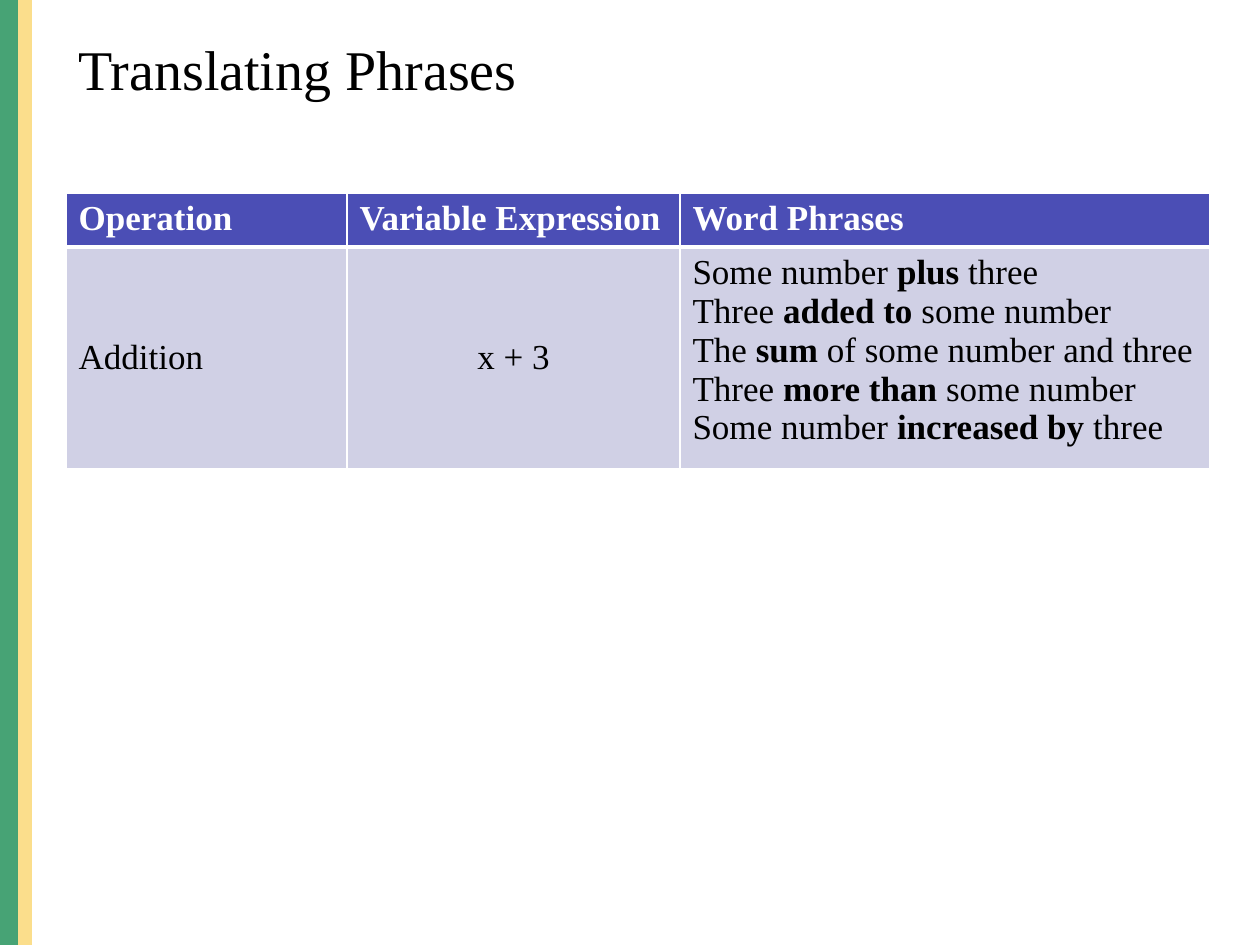
from lxml.etree import SubElement
from pptx import Presentation
from pptx.dml.color import RGBColor
from pptx.enum.shapes import MSO_SHAPE
from pptx.enum.text import MSO_ANCHOR, PP_ALIGN
from pptx.oxml.ns import qn
from pptx.util import Emu, Inches, Pt

FONT = "Times New Roman"
BLACK = RGBColor(0x00, 0x00, 0x00)
WHITE = RGBColor(0xFF, 0xFF, 0xFF)
GREEN = RGBColor(0x33, 0x99, 0x66)
GOLD = RGBColor(0xF8, 0xBE, 0x1A)
INDIGO = RGBColor(0x4B, 0x4E, 0xB5)
LAVENDER = RGBColor(0xD0, 0xD0, 0xE5)

HEADINGS = ["Operation", "Variable Expression", "Word Phrases"]
PHRASES = [
    ("Some number ", "plus", " three"),
    ("Three ", "added to ", "some number"),
    ("The ", "sum", " of some number and three"),
    ("Three ", "more than ", "some number"),
    ("Some number ", "increased by ", "three"),
]
COLUMN_WIDTHS = [281, 333, 530]
ROW_HEIGHTS = [54, 222]


def px(length):
    return Emu(round(length * 914400 / 126))


def set_font(paragraph, size, color, bold=False):
    font = paragraph.font
    font.name, font.size, font.bold = FONT, Pt(size), bold
    font.color.rgb = color


def add_stripe(slide, left, top, width, height, color, opacity):
    stripe = slide.shapes.add_shape(
        MSO_SHAPE.RECTANGLE, px(left), px(top), px(width), px(height))
    stripe.shadow.inherit = False
    stripe.line.fill.background()
    stripe.fill.solid()
    stripe.fill.fore_color.rgb = color
    shade = stripe.fill._xPr.find(qn("a:solidFill"))[0]
    SubElement(shade, qn("a:alpha"), val=str(opacity * 1000))


def add_side_band(slide, left, top, height):
    add_stripe(slide, left + 18, top, 14, height, GOLD, 50)
    add_stripe(slide, left, top, 18, height, GREEN, 90)


def place_title(slide, left, top, width, height):
    title = slide.shapes.title
    title.left, title.top = px(left), px(top)
    title.width, title.height = px(width), px(height)
    frame = title.text_frame
    frame.text = "Translating Phrases"
    frame.vertical_anchor = MSO_ANCHOR.TOP
    frame.margin_left, frame.margin_right = Inches(0.1), 0
    heading = frame.paragraphs[0]
    heading.alignment = PP_ALIGN.LEFT
    heading.space_before = Pt(3.2)
    set_font(heading, 32, BLACK)


def set_borders(cell, widths):
    properties = cell._tc.get_or_add_tcPr()
    for position, (side, width) in enumerate(widths.items()):
        border = SubElement(properties, qn(f"a:{side}"), w=str(Pt(width)))
        properties.insert(position, border)
        fill = SubElement(border, qn("a:solidFill"))
        SubElement(fill, qn("a:srgbClr"), val=str(WHITE))


def fill_phrases(cell):
    frame = cell.text_frame
    for index, parts in enumerate(PHRASES):
        line = frame.add_paragraph() if index else frame.paragraphs[0]
        for part in parts:
            line.add_run().text = part
        line.runs[1].font.bold = True


def add_phrase_table(slide, left, top):
    table = slide.shapes.add_table(
        len(ROW_HEIGHTS), len(COLUMN_WIDTHS), px(left), px(top),
        px(sum(COLUMN_WIDTHS)), px(sum(ROW_HEIGHTS))).table
    for column, width in zip(table.columns, COLUMN_WIDTHS):
        column.width = px(width)
    for row, height in zip(table.rows, ROW_HEIGHTS):
        row.height = px(height)
    for column, heading in enumerate(HEADINGS):
        table.cell(0, column).text = heading

    operation, expression, phrases = table.rows[1].cells
    operation.text = "Addition"
    expression.text = "x + 3"
    expression.text_frame.paragraphs[0].alignment = PP_ALIGN.CENTER
    operation.vertical_anchor = expression.vertical_anchor = MSO_ANCHOR.MIDDLE
    fill_phrases(phrases)

    styles = [(INDIGO, WHITE, True, 1, 3), (LAVENDER, BLACK, False, 3, 1)]
    for row, (background, ink, bold, above, below) in zip(table.rows, styles):
        for cell in row.cells:
            cell.fill.solid()
            cell.fill.fore_color.rgb = background
            set_borders(cell, {"lnL": 1, "lnR": 1, "lnT": above, "lnB": below})
            for paragraph in cell.text_frame.paragraphs:
                set_font(paragraph, 20, ink, bold)


def main():
    presentation = Presentation()
    presentation.slide_width = px(1260)
    presentation.slide_height = px(945)
    slide = presentation.slides.add_slide(presentation.slide_layouts[5])
    add_side_band(slide, 0, 0, 945)
    place_title(slide, 66, 28, 956, 98)
    add_phrase_table(slide, 66, 193)
    presentation.save("out.pptx")


if __name__ == "__main__":
    main()
